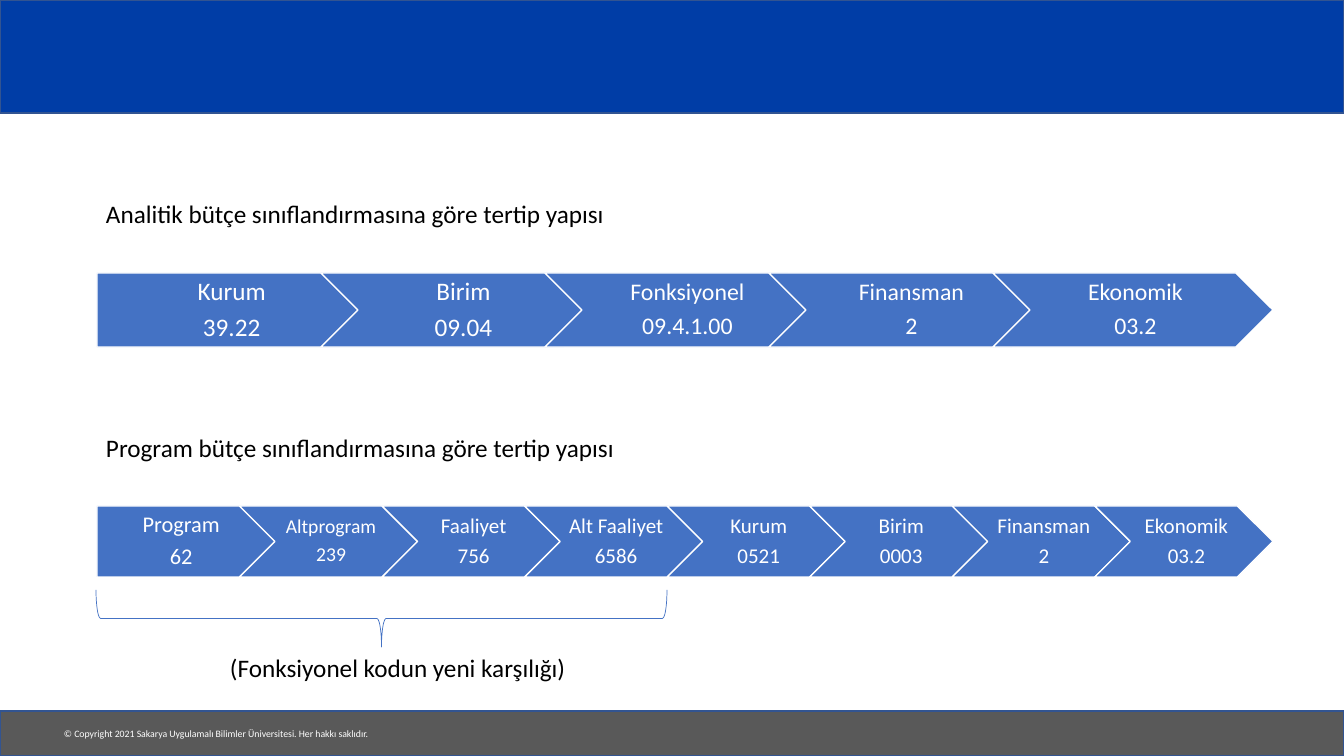
from pptx import Presentation
from pptx.dml.color import RGBColor
from pptx.enum.shapes import MSO_SHAPE
from pptx.enum.text import MSO_ANCHOR, PP_ALIGN
from pptx.util import Pt

RECT, BRACE = MSO_SHAPE.RECTANGLE, MSO_SHAPE.RIGHT_BRACE
PENTAGON, CHEVRON = MSO_SHAPE.PENTAGON, MSO_SHAPE.CHEVRON
TOP, MIDDLE = MSO_ANCHOR.TOP, MSO_ANCHOR.MIDDLE
LEFT, CENTER = PP_ALIGN.LEFT, PP_ALIGN.CENTER

PX = 914400 / 100.8
FONT = "Calibri"
BLUE, WHITE, BLACK = "4472C4", "FFFFFF", "000000"
BARS = [(0, 113, "003DA6"), (711, 45, "595959")]
LABELS = [
    ("© Copyright 2021 Sakarya Uygulamalı Bilimler Üniversitesi. Her hakkı saklıdır.",
     (54, 723, 332, 22), 7, WHITE),
    ("Analitik bütçe sınıflandırmasına göre tertip yapısı", (96, 193, 1004, 72), 18, BLACK),
    ("Program bütçe sınıflandırmasına göre tertip yapısı", (96, 427, 1004, 72), 18, BLACK),
    ("(Fonksiyonel kodun yeni karşılığı)", (220, 647, 456, 40), 18, BLACK),
]
ROW_LEFT, ROW_WIDTH, STEP_RATIO = 97, 1176, 0.8
ROWS = [
    (273, 74, [("Kurum", "39.22", 18), ("Birim", "09.04", 18), ("Fonksiyonel", "09.4.1.00", 17),
               ("Finansman", "2", 17), ("Ekonomik", "03.2", 17)]),
    (506, 71, [("Program", "62", 16), ("Altprogram", "239", 14), ("Faaliyet", "756", 15),
               ("Alt Faaliyet", "6586", 15), ("Kurum", "0521", 15), ("Birim", "0003", 15),
               ("Finansman", "2", 15), ("Ekonomik", "03.2", 15)]),
]
BRACE_BOX = (353, 333, 57, 571)


def emu(*lengths):
    return [round(n * PX) for n in lengths]


def color(value):
    return RGBColor.from_string(value)


def add_shape(slide, kind, box, fill, line, weight=1):
    s = slide.shapes.add_shape(kind, *emu(*box))
    s.shadow.inherit = False
    if fill:
        s.fill.solid()
        s.fill.fore_color.rgb = color(fill)
    else:
        s.fill.background()
    s.line.color.rgb = color(line)
    s.line.width = Pt(weight)
    return s


def write(s, lines, size, ink, align=LEFT, anchor=TOP, insets=(10, 5, 10, 5)):
    tf = s.text_frame
    tf.word_wrap = True
    tf.vertical_anchor = anchor
    tf.margin_left, tf.margin_top, tf.margin_right, tf.margin_bottom = emu(*insets)
    for i, line in enumerate(lines):
        p = tf.add_paragraph() if i else tf.paragraphs[0]
        p.text = line
        p.alignment = align
        p.font.name, p.font.size = FONT, Pt(size)
        p.font.color.rgb = color(ink)
        if len(lines) > 1:
            p.line_spacing = 0.9
        if i:
            p.space_before = Pt(round(size * 0.34, 1))


def add_row(slide, top, height, steps):
    width = ROW_WIDTH / (1 + STEP_RATIO * (len(steps) - 1))
    for i, (name, code, size) in enumerate(steps):
        box = (ROW_LEFT + i * STEP_RATIO * width, top, width, height)
        s = add_shape(slide, CHEVRON if i else PENTAGON, box, BLUE, WHITE)
        insets = (7 if i else 10, 4, 2, 4)
        write(s, (name, code), size, WHITE, CENTER, MIDDLE, insets)


def main():
    """Build the slide comparing the two budget code structures."""
    prs = Presentation()
    prs.slide_width, prs.slide_height = emu(1344, 756)
    slide = prs.slides.add_slide(prs.slide_layouts[6])
    for top, height, fill in BARS:
        add_shape(slide, RECT, (0, top, 1344, height), fill, "325491")
    for text, box, size, ink in LABELS:
        write(slide.shapes.add_textbox(*emu(*box)), [text], size, ink)
    for row in ROWS:
        add_row(slide, *row)
    brace = add_shape(slide, BRACE, BRACE_BOX, None, BLUE, 0.5)
    brace.rotation = 90
    brace.adjustments[0], brace.adjustments[1] = 0.08, 0.5
    prs.save("out.pptx")


if __name__ == "__main__":
    main()
